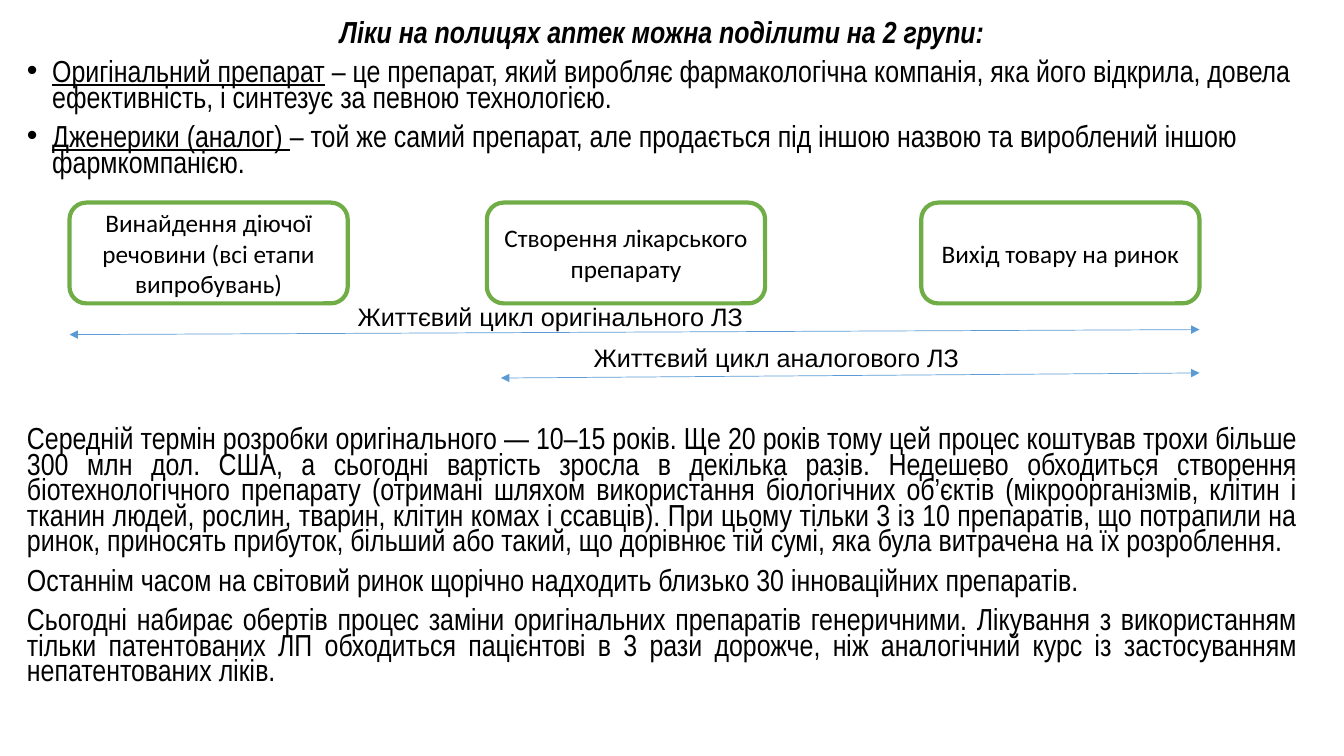
"""Builds a slide on original and generic medicines with their life cycles."""
from lxml import etree
from pptx import Presentation, util as u
from pptx.dml.color import RGBColor
from pptx.enum import shapes, text
from pptx.oxml.ns import qn

COLORS = {"ink": "000000", "paper": "FFFFFF", "border": "70AD47", "arrow": "5B9BD5"}
COLS, ROWS = 128, 72
LEFT, WIDTH = 1.63, 122.88
BOX_TOP, BOX_W, BOX_H = 19.3, 26.5, 9.6
RIGHT = 114.24

BULLETS = [
    [("Оригінальний препарат", True),
     (" – це препарат, який виробляє фармакологічна компанія, яка його відкрила, "
      "довела ефективність, і синтезує за певною технологією.", False)],
    [("Дженерики (аналог) ", True),
     ("– той же самий препарат, але продається під іншою назвою та вироблений "
      "іншою фармкомпанією.", False)],
]
FACTS = [
    "Середній термін розробки оригінального — 10–15 років. Ще 20 років тому цей процес "
    "коштував трохи більше 300 млн дол. США, а сьогодні вартість зросла в декілька разів. "
    "Недешево обходиться створення біотехнологічного препарату (отримані шляхом використання "
    "біологічних об’єктів (мікроорганізмів, клітин і тканин людей, рослин, тварин, клітин "
    "комах і ссавців). При цьому тільки 3 із 10 препаратів, що потрапили на ринок, приносять "
    "прибуток, більший або такий, що дорівнює тій сумі, яка була витрачена на їх розроблення.",
    "Останнім часом на світовий ринок щорічно надходить близько 30 інноваційних препаратів.",
    "Сьогодні набирає обертів процес заміни оригінальних препаратів генеричними. Лікування з "
    "використанням тільки патентованих ЛП обходиться пацієнтові в 3 рази дорожче, ніж "
    "аналогічний курс із застосуванням непатентованих ліків.",
]
STAGES = [
    (6.62, "Винайдення діючої речовини (всі етапи випробувань)"),
    (46.37, "Створення лікарського препарату"),
    (87.74, "Вихід товару на ринок"),
]
CYCLES = [
    (6.62, 31.87, "Життєвий цикл оригінального ЛЗ", 33.12, 28.22, 39),
    (47.71, 36, "Життєвий цикл аналогового ЛЗ", 55.58, 32.16, 37),
]


def rgb(name):
    """Return a palette colour."""
    return RGBColor.from_string(COLORS[name])


class Deck:
    """Holds the style and the current slide."""

    def __init__(self):
        """Open a widescreen deck with one title-only slide."""
        self.prs = Presentation()
        self.prs.slide_width, self.prs.slide_height = u.Inches(13.33), u.Inches(7.5)
        self.s = self.prs.slides.add_slide(self.prs.slide_layouts[5])

    def grid(self, x, y):
        """Turn grid columns and rows into slide lengths."""
        return (int(self.prs.slide_width * x / COLS),
                int(self.prs.slide_height * y / ROWS))

    def run(self, p, words, font, size, **style):
        """Add one run to a paragraph."""
        r = p.add_run()
        r.text = words
        r.font.name, r.font.size = font, u.Pt(size)
        r.font.color.rgb = rgb("ink")
        for key, value in style.items():
            setattr(r.font, key, value)

    def narrow(self, p, runs, align, **style):
        """Fill a tightly spaced narrow paragraph."""
        p.alignment, p.line_spacing, p.space_before = align, 0.7, u.Pt(10)
        for words, underline in runs:
            self.run(p, words, "Arial Narrow", 21.7, underline=underline, **style)

    def title(self, words, x, y, w, h):
        """Move and format the title placeholder."""
        sp = self.s.shapes.title
        sp.left, sp.top = self.grid(x, y)
        sp.width, sp.height = self.grid(w, h)
        tf = sp.text_frame
        tf.auto_size, tf.vertical_anchor = text.MSO_AUTO_SIZE.NONE, text.MSO_ANCHOR.TOP
        self.narrow(tf.paragraphs[0], [(words, False)], text.PP_ALIGN.CENTER,
                    bold=True, italic=True)

    def prose(self, paragraphs, x, y, w, h, align, bullet=False):
        """Add a wrapped block of paragraphs."""
        sp = self.s.shapes.add_textbox(*self.grid(x, y), *self.grid(w, h))
        tf = sp.text_frame
        tf.word_wrap = True
        for i, runs in enumerate(paragraphs):
            p = tf.add_paragraph() if i else tf.paragraphs[0]
            self.narrow(p, runs, align)
            if bullet:
                pr = p._p.get_or_add_pPr()
                pr.set("marL", str(u.Inches(0.25)))
                pr.set("indent", str(-u.Inches(0.25)))
                etree.SubElement(pr, qn("a:buFont")).set("typeface", "Arial")
                etree.SubElement(pr, qn("a:buChar")).set("char", "•")

    def stage(self, words, x, y, w, h):
        """Add a rounded stage box."""
        sp = self.s.shapes.add_shape(shapes.MSO_SHAPE.ROUNDED_RECTANGLE,
                                     *self.grid(x, y), *self.grid(w, h))
        sp.shadow.inherit = False
        sp.fill.solid()
        sp.fill.fore_color.rgb = rgb("paper")
        sp.line.color.rgb, sp.line.width = rgb("border"), u.Pt(3)
        tf = sp.text_frame
        tf.word_wrap, tf.vertical_anchor = True, text.MSO_ANCHOR.MIDDLE
        p = tf.paragraphs[0]
        p.alignment = text.PP_ALIGN.CENTER
        self.run(p, words, "Calibri", 18)

    def arrow(self, x1, y1, x2, y2):
        """Add a thin double-headed arrow."""
        sp = self.s.shapes.add_connector(shapes.MSO_CONNECTOR.STRAIGHT,
                                         *self.grid(x1, y1), *self.grid(x2, y2))
        sp.line.color.rgb, sp.line.width = rgb("arrow"), u.Pt(0.5)
        ln = sp.line._get_or_add_ln()
        for end in ("a:headEnd", "a:tailEnd"):
            etree.SubElement(ln, qn(end)).set("type", "triangle")
        etree.SubElement(sp._element.spPr, qn("a:effectLst"))

    def label(self, words, x, y, w, h):
        """Add a one-line label."""
        sp = self.s.shapes.add_textbox(*self.grid(x, y), *self.grid(w, h))
        tf = sp.text_frame
        tf.word_wrap, tf.auto_size = False, text.MSO_AUTO_SIZE.SHAPE_TO_FIT_TEXT
        self.run(tf.paragraphs[0], words, "Arial", 18)


def main():
    """Build and save the slide."""
    deck = Deck()
    deck.title("Ліки на полицях аптек можна поділити на 2 групи:", LEFT, 1.73, WIDTH, 3.4)
    deck.prose(BULLETS, LEFT, 5.47, WIDTH, 12, text.PP_ALIGN.LEFT, bullet=True)
    deck.prose([[(fact, False)] for fact in FACTS], LEFT, 40.42, WIDTH, 29.2,
               text.PP_ALIGN.JUSTIFY)
    for x, words in STAGES:
        deck.stage(words, x, BOX_TOP, BOX_W, BOX_H)
    for x, y, words, label_x, label_y, label_w in CYCLES:
        deck.arrow(x, y, RIGHT, y - 0.48)
        deck.label(words, label_x, label_y, label_w, 3.84)
    deck.prs.save("out.pptx")


if __name__ == "__main__":
    main()
